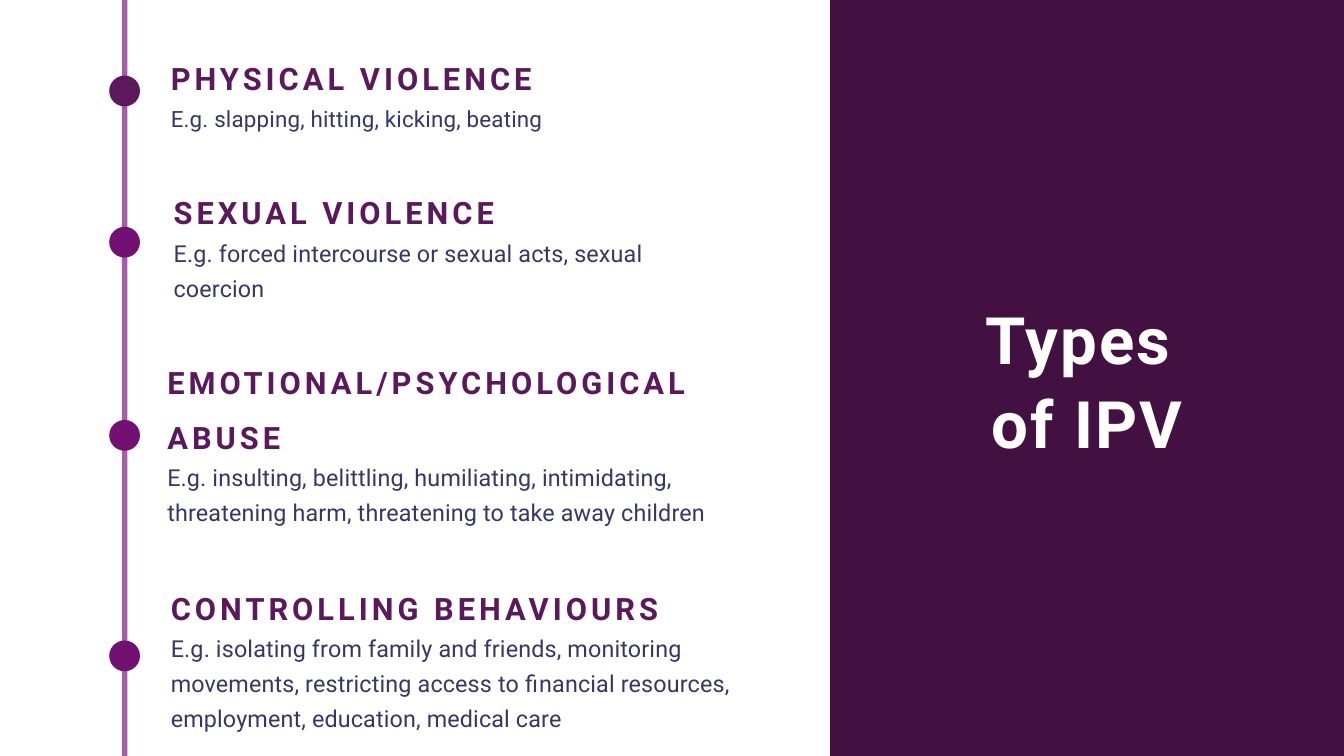
from pptx import Presentation
from pptx.dml.color import RGBColor
from pptx.enum.shapes import MSO_SHAPE
from pptx.enum.text import MSO_ANCHOR, MSO_AUTO_SIZE, PP_ALIGN
from pptx.util import Pt

PX = 9525
WIDE, HIGH = 1920, 1080
RECT, OVAL = MSO_SHAPE.RECTANGLE, MSO_SHAPE.OVAL
LEFT, MID = PP_ALIGN.LEFT, PP_ALIGN.CENTER
TOP, GROW = MSO_ANCHOR.TOP, MSO_AUTO_SIZE.SHAPE_TO_FIT_TEXT

WHITE = RGBColor(0xFF, 0xFE, 0xFB)
LILAC = RGBColor(0xA4, 0x5E, 0xA4)
PLUM = RGBColor(0x5B, 0x19, 0x5B)
PURPLE = RGBColor(0x72, 0x11, 0x72)
DARK = RGBColor(0x42, 0x11, 0x42)
NAVY = RGBColor(0x39, 0x36, 0x67)

HEAD = dict(size=33, color=PLUM, bold=True, track=4.3, lead=58.4)
BODY = dict(size=25, color=NAVY, track=0.2, lead=37.5)
TITLE = dict(size=70, color=WHITE, bold=True, track=2.2, lead=90, align=MID)

# left, top, head width, head lines, body width, body lines, body size, head, body
TYPES = [
    (244, 60, 633, 1, 633, 1, 24, "PHYSICAL VIOLENCE",
     "E.g. slapping, hitting, kicking, beating"),
    (248, 252, 682, 1, 682, 2, 25, "SEXUAL VIOLENCE",
     "E.g. forced intercourse or sexual acts, sexual coercion"),
    (239, 495, 852, 2, 808, 2, 25, "EMOTIONAL/PSYCHOLOGICAL ABUSE",
     "E.g. insulting, belittling, humiliating, intimidating, "
     "threatening harm, threatening to take away children"),
    (244, 817, 902, 1, 902, 3, 25, "CONTROLLING BEHAVIOURS",
     "E.g. isolating from family and friends, monitoring movements, "
     "restricting access to financial resources, employment, education, "
     "medical care"),
]
DOTS = [(108, PLUM), (324, PURPLE), (600, PURPLE), (915, PURPLE)]


def write(frame, text, size, color, track, lead, bold=False, align=LEFT):
    """Fill the frame, one paragraph a line; track and lead are in points."""
    frame.word_wrap = True
    frame.auto_size = GROW
    frame.vertical_anchor = TOP
    frame.margin_left = frame.margin_right = 0
    frame.margin_top = frame.margin_bottom = 0
    for i, line in enumerate(text.split("\n")):
        para = frame.add_paragraph() if i else frame.paragraphs[0]
        para.alignment = align
        para.line_spacing = Pt(lead)
        para.space_before = Pt(0)
        run = para.add_run()
        run.text = line
        font = run.font
        font.name, font.size, font.bold = "Roboto", Pt(size), bold
        font.color.rgb = color
        run._r.get_or_add_rPr().set("spc", str(round(track * 100)))


class Deck:
    """Holds the file, its scale and the current slide."""

    def __init__(self):
        self.file = Presentation()
        self.file.slide_width = WIDE * PX
        self.file.slide_height = HIGH * PX
        self.slide = self.file.slides.add_slide(self.file.slide_layouts[5])

    def shape(self, kind, box, fill):
        item = self.slide.shapes.add_shape(kind, *(n * PX for n in box))
        item.shadow.inherit = False
        item.fill.solid()
        item.fill.fore_color.rgb = fill
        item.line.fill.background()

    def text(self, box, text, **style):
        item = self.slide.shapes.add_textbox(*(n * PX for n in box))
        write(item.text_frame, text, **style)

    def title(self, box, text, **style):
        """Place the title and bring it in front of the panel."""
        item = self.slide.shapes.title
        item.left, item.top, item.width, item.height = (n * PX for n in box)
        write(item.text_frame, text, **style)
        item.element.getparent().append(item.element)

    def entry(self, left, top, wide, rows, span, lines, size, head, body):
        """Set a heading and the examples 11 px under it."""
        high = 77 * rows - 9
        self.text((left, top, wide, high), head, **HEAD)
        box = (left, top + high + 11, span, 52 * lines - 8)
        self.text(box, body, **{**BODY, "size": size})


def main():
    deck = Deck()
    deck.shape(RECT, (174, -36, 8, 1152), LILAC)
    for top, fill in DOTS:
        deck.shape(OVAL, (156, top, 44, 44), fill)
    deck.shape(RECT, (1186, -58, 734, 1196), DARK)
    deck.title((1228, 419, 650, 231), "Types \nof IPV", **TITLE)
    for item in TYPES:
        deck.entry(*item)
    deck.file.save("out.pptx")


if __name__ == "__main__":
    main()
